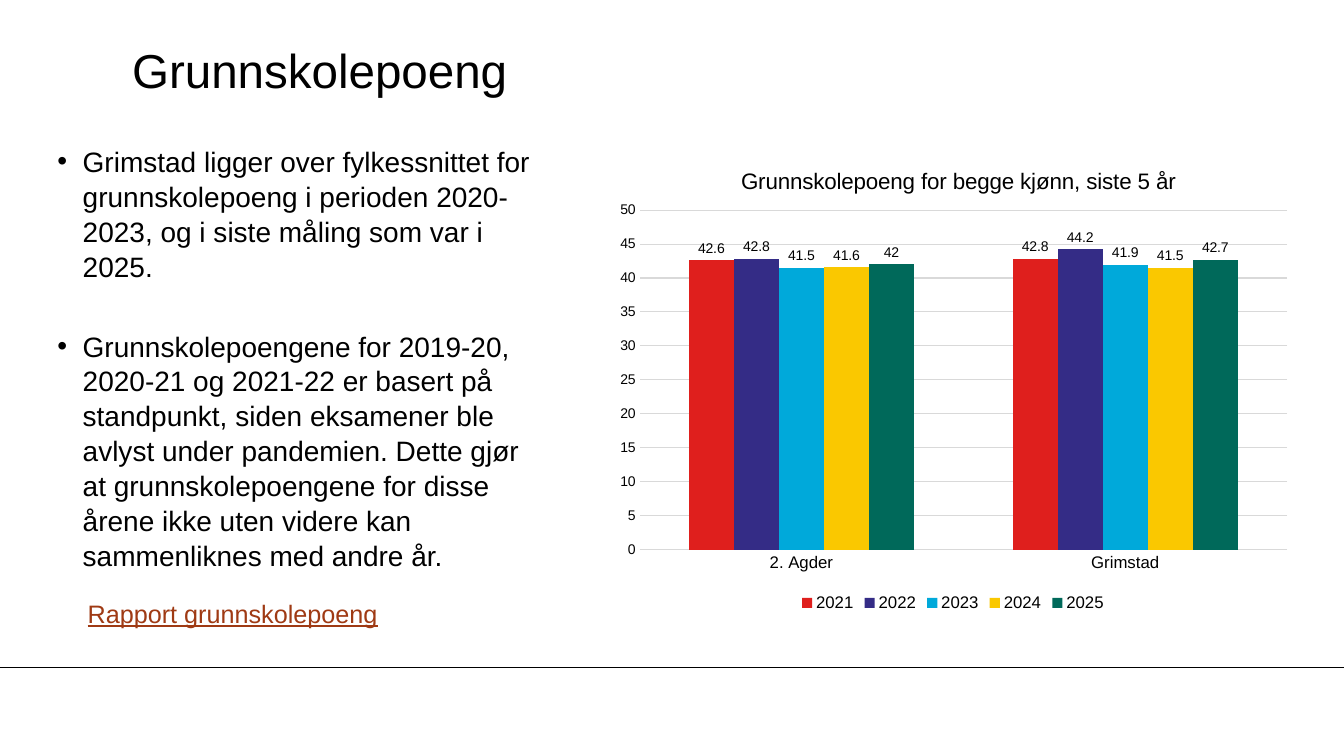
"""Builds the Grunnskolepoeng slide with text, link line and column chart."""
import pptx
import pptx.chart.data
import pptx.dml.color
import pptx.enum.chart
import pptx.enum.shapes
import pptx.enum.text
import pptx.oxml
import pptx.oxml.ns
import pptx.util

Cm, Pt = pptx.util.Cm, pptx.util.Pt
qn = pptx.oxml.ns.qn
enum = pptx.enum.chart

HEAD = "Grunnskolepoeng"
POINTS = [
    "Grimstad ligger over fylkessnittet for grunnskolepoeng i perioden 2020-2023, "
    "og i siste måling som var i 2025.",
    "Grunnskolepoengene for 2019-20, 2020-21 og 2021-22 er basert på standpunkt, "
    "siden eksamener ble avlyst under pandemien. Dette gjør at grunnskolepoengene "
    "for disse årene ikke uten videre kan sammenliknes med andre år.",
]
REPORT = "Rapport grunnskolepoeng"
TITLE = "Grunnskolepoeng for begge kjønn, siste 5 år"
PLACES = ["2. Agder", "Grimstad"]
YEARS = [
    ("2021", (42.6, 42.8), "DF1F1D"),
    ("2022", (42.8, 44.2), "342C86"),
    ("2023", (41.5, 41.9), "00A9DA"),
    ("2024", (41.6, 41.5), "FAC800"),
    ("2025", (42, 42.7), "00695A"),
]
BLACK, GREY, RUST = "000000", "D9D9D9", "9F3A14"
WIDE, HIGH, RULE = 33.87, 19.05, 16.81
BOXES = {
    "head": (3.33, 0.81, 28.19, 1.9),
    "body": (1.45, 3.61, 11.99, 10.57),
    "report": (1.96, 14.94, 8.38, 1.02),
    "chart": (15.24, 3.63, 17.55, 11.89),
}
PLOT = {"x": 0.05, "y": 0.14, "w": 0.93, "h": 0.72}
TOP = {"x": 0.19, "y": 0.04}


def rgb(code):
    return pptx.dml.color.RGBColor.from_string(code)


def style(item, **values):
    for name, value in values.items():
        setattr(item, name, value)


def ink(font, size, code=BLACK, **more):
    style(font, name="Arial", size=Pt(size), bold=False, **more)
    font.color.rgb = rgb(code)


def stroke(line, code, width=0.75):
    line.color.rgb = rgb(code)
    line.width = Pt(width)


def place(name):
    return [Cm(n) for n in BOXES[name]]


def write(slide, name, lines, size, code=BLACK, inset=True, **more):
    frame = slide.shapes.add_textbox(*place(name)).text_frame
    frame.word_wrap = True
    if not inset:
        style(frame, margin_left=0, margin_right=0, margin_top=0, margin_bottom=0)
    for i, text in enumerate(lines):
        para = frame.paragraphs[0] if i == 0 else frame.add_paragraph()
        run = para.add_run()
        run.text = text
        ink(run.font, size, code, **more)
    return frame


def bullet(para):
    props = para._p.get_or_add_pPr()
    props.set("marL", str(Cm(0.635)))
    props.set("indent", str(-Cm(0.635)))
    for tag, key, value in [("buFont", "typeface", "Arial"), ("buChar", "char", "•")]:
        item = pptx.oxml.parse_xml(f'<a:{tag} {pptx.oxml.ns.nsdecls("a")} {key}="{value}"/>')
        props.append(item)


def layout(parent, spot, index, inner=False):
    for old in parent.findall(qn("c:layout")):
        parent.remove(old)
    parts = '<c:layoutTarget val="inner"/>' if inner else ""
    parts += "".join(f'<c:{k}Mode val="edge"/>' for k in "xy")
    parts += "".join(f'<c:{k} val="{v}"/>' for k, v in spot.items())
    parent.insert(index, pptx.oxml.parse_xml(
        f'<c:layout {pptx.oxml.ns.nsdecls("c")}><c:manualLayout>{parts}'
        "</c:manualLayout></c:layout>"))


def draw(slide):
    data = pptx.chart.data.CategoryChartData()
    data.categories = PLACES
    for year, values, _ in YEARS:
        data.add_series(year, values)
    kind = enum.XL_CHART_TYPE.COLUMN_CLUSTERED
    chart = slide.shapes.add_chart(kind, *place("chart"), data).chart
    ink(chart.font, 10)

    chart.has_title = True
    text = chart.chart_title.text_frame
    text.text = TITLE
    ink(text.paragraphs[0].runs[0].font, 16)
    layout(chart.chart_title._element, TOP, 1)
    layout(chart._chartSpace.chart.plotArea, PLOT, 0, True)

    chart.has_legend = True
    style(chart.legend, position=enum.XL_LEGEND_POSITION.BOTTOM, include_in_layout=False)
    ink(chart.legend.font, 12)

    plot = chart.plots[0]
    style(plot, gap_width=219, overlap=0, vary_by_categories=False)
    for series, (_, _, code) in zip(plot.series, YEARS):
        series.format.fill.solid()
        series.format.fill.fore_color.rgb = rgb(code)
        labels = series.data_labels
        style(labels, show_value=True, position=enum.XL_LABEL_POSITION.OUTSIDE_END)
        ink(labels.font, 10)

    none = enum.XL_TICK_MARK.NONE
    for axis, size in [(chart.category_axis, 12), (chart.value_axis, 10)]:
        style(axis, major_tick_mark=none, minor_tick_mark=none)
        ink(axis.tick_labels.font, size)
    stroke(chart.category_axis.format.line, GREY)
    axis = chart.value_axis
    style(axis, minimum_scale=0, maximum_scale=50, major_unit=5, has_major_gridlines=True)
    axis.format.line.fill.background()
    stroke(axis.major_gridlines.format.line, GREY)


def main():
    deck = pptx.Presentation()
    style(deck, slide_width=Cm(WIDE), slide_height=Cm(HIGH))
    slide = deck.slides.add_slide(deck.slide_layouts[6])

    straight = pptx.enum.shapes.MSO_CONNECTOR.STRAIGHT
    rule = slide.shapes.add_connector(straight, 0, Cm(RULE), Cm(WIDE), Cm(RULE))
    stroke(rule.line, BLACK)
    rule._element.spPr.append(
        pptx.oxml.parse_xml(f'<a:effectLst {pptx.oxml.ns.nsdecls("a")}/>'))

    head = write(slide, "head", [HEAD], 34, inset=False)
    head.vertical_anchor = pptx.enum.text.MSO_ANCHOR.MIDDLE
    body = write(slide, "body", POINTS, 20, inset=False)
    for i, para in enumerate(body.paragraphs):
        bullet(para)
        style(para, line_spacing=1.04, space_before=Pt(32 if i else 0))
    write(slide, "report", [REPORT], 18, RUST, underline=True)
    draw(slide)
    deck.save("out.pptx")


if __name__ == "__main__":
    main()
